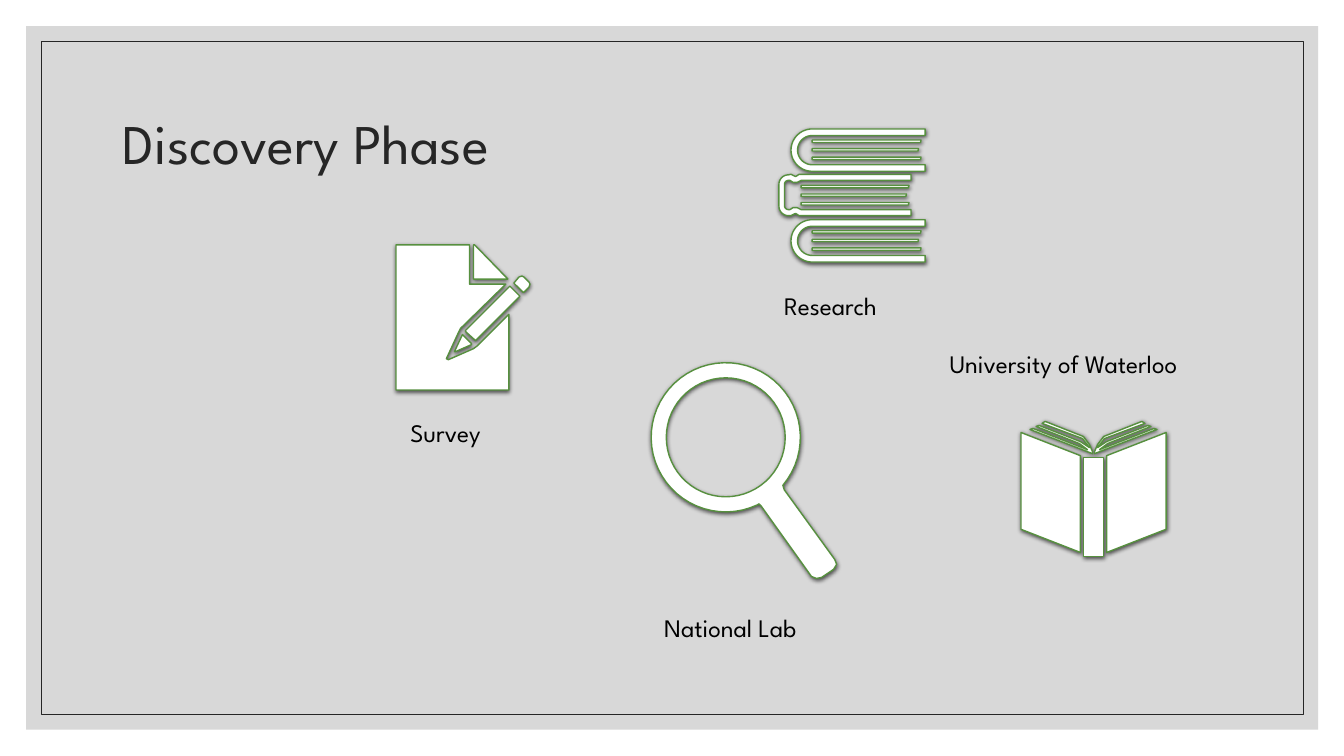
"""Build the Discovery Phase slide with its four icons and labels."""
import math

from lxml import etree
from pptx import Presentation
from pptx import util as u
from pptx.dml import color
from pptx.enum import shapes, text
from pptx.oxml import ns

GRID = 0.0254
FONT = "League Spartan"
INK, GREEN, GREY = "262626", "57903F", "BFBFBF"


def rgb(value):
    """Return a colour from a hex string."""
    return color.RGBColor.from_string(value)


def child(parent, tag, **attrs):
    """Append a drawing element with attributes."""
    return etree.SubElement(parent, ns.qn(tag), {k: str(v) for k, v in attrs.items()})


def set_attrs(obj, values):
    """Set each attribute of an object from a dict."""
    for name, value in values.items():
        setattr(obj, name, value)


def style(sp, fill=None, line=None, width=0.5):
    """Give a shape a plain fill and outline."""
    sp.shadow.inherit = False
    if fill:
        sp.fill.solid()
        sp.fill.fore_color.rgb = rgb(fill)
    else:
        sp.fill.background()
    if line:
        sp.line.color.rgb = rgb(line)
        sp.line.width = u.Pt(width)
    else:
        sp.line.fill.background()


def panel(s, inset, size, **look):
    """Draw a rectangle inset equally from the slide corner."""
    box = [u.Cm(v) for v in (inset, inset, *size)]
    sp = s.shapes.add_shape(shapes.MSO_SHAPE.RECTANGLE, *box)
    style(sp, **look)
    return sp


def label(s, words, box, size=18, ink="000000", frame=None, spacing=None):
    """Add a single-paragraph text box."""
    sp = s.shapes.add_textbox(*[u.Cm(v) for v in box])
    tf = sp.text_frame
    margins = {f"margin_{side}": u.Cm(0.13) for side in ("left", "top", "right", "bottom")}
    fit = {"word_wrap": False, "auto_size": text.MSO_AUTO_SIZE.SHAPE_TO_FIT_TEXT}
    set_attrs(tf, {**margins, **(frame or fit)})
    p = tf.paragraphs[0]
    p.line_spacing = spacing
    r = p.add_run()
    r.text = words
    set_attrs(r.font, {"name": FONT, "size": u.Pt(size)})
    r.font.color.rgb = rgb(ink)


def icon(s, left, top, contours):
    """Draw closed contours as one white icon with a soft shadow."""
    outlines = [[(u.Cm(x * GRID), u.Cm(y * GRID)) for x, y in c] for c in contours]
    builder = s.shapes.build_freeform(*outlines[0][0])
    for i, points in enumerate(outlines):
        if i:
            builder.move_to(*points[0])
        builder.add_line_segments(points[1:], close=True)
    sp = builder.convert_to_shape(u.Cm(left), u.Cm(top))
    style(sp, fill="FFFFFF", line=GREEN, width=1)
    effects = sp._element.spPr.find(ns.qn("a:effectLst"))
    shadow = child(effects, "a:outerShdw", blurRad=u.Pt(3), dist=u.Pt(1), dir=5400000,
                   algn="ctr", rotWithShape=0)
    child(child(shadow, "a:srgbClr", val="000000"), "a:alpha", val=63000)


def arc(cx, cy, r, start, end):
    """Return points along an arc, with degrees running clockwise."""
    steps = max(6, round(abs(end - start) / 6))
    angles = [math.radians(start + (end - start) * i / steps) for i in range(steps + 1)]
    return [(cx + r * math.cos(a), cy + r * math.sin(a)) for a in angles]


def survey():
    """Return the sheet, folded corner and pencil."""
    sheet = [(0, 0), (0, 144), (112, 144), (112, 69), (81, 100), (77, 103), (52, 114),
             (50, 113), (62, 87), (64, 83), (109, 39), (73, 39), (73, 0)]
    fold = [(77, 0), (77, 34), (111, 34), (78, 0)]
    eraser = [(125, 31), (122, 32), (117, 38), (126, 47), (127, 47), (132, 42),
              (133, 39), (132, 37), (127, 32)]
    pencil = [(113, 41), (69, 85), (69, 86), (79, 95), (123, 51)]
    tip = [(66, 89), (58, 106), (59, 106), (75, 99), (75, 98)]
    return [sheet, fold, eraser, pencil, tip]


def magnifier():
    """Return the ring with its handle, and the lens opening."""
    handle = [(132, 126), (182, 195), (184, 200), (181, 205), (169, 213), (164, 214),
              (159, 212), (109, 142), (107, 140)]
    return [arc(74, 74, 74, 65, 400) + handle, arc(74, 74, 59, 0, 360)]


def pages(x, end, y):
    """Return three page lines, the middle one shorter."""
    return [[(x, top), (right, top), (right - 0.5, top + 2.4), (x, top + 2.4)]
            for top, right in ((y, end), (y + 8.5, end - 2.5), (y + 17, end))]


def round_book(y):
    """Return a book with a round spine."""
    cover = [(145, y), *arc(33, y + 21, 21, 270, 90), (145, y + 42), (145, y + 35.5),
             *arc(33, y + 21, 14.5, 90, 270), (145, y + 6.5)]
    return [cover] + pages(33, 141, y + 11)


def flat_book(y):
    """Return a book with a grooved flat spine."""
    outer = arc(9.5, 10, 9.5, 270, 180) + arc(9.5, 31.5, 9.5, 180, 90)
    inner = arc(9.5, 31, 4, 90, 180) + arc(9.5, 10, 4, 180, 270)
    lower = [(12, 41), (16, 39), (17, 39), (20, 41), (131, 41), (131, 35), (22, 35),
             (18, 33), (14, 33), (11, 35)]
    upper = [(x, 41 - v) for x, v in reversed(lower)]
    cover = [(x, y + v) for x, v in outer + lower + inner + upper]
    return [cover] + pages(22, 129, y + 11)


def open_book():
    """Return the spine and mirrored halves of an open book."""
    leaves = [(120, 0), (82, 15), (76, 23), (73, 30), (73, 32), (135, 8), (132, 7),
              (78, 28), (86, 22), (129, 5), (126, 4), (85, 20), (76, 26), (83, 17), (123, 2)]
    cover = [(144, 11), (85, 34), (85, 130), (144, 107)]
    spine = [(62, 36), (62, 134), (82, 134), (82, 36)]
    mirrored = [[(144 - x, y) for x, y in half] for half in (leaves, cover)]
    return [leaves, cover, *mirrored, spine]


def main():
    """Assemble and save the slide."""
    prs = Presentation()
    set_attrs(prs, {"slide_width": u.Cm(33.87), "slide_height": u.Cm(19.05)})
    s = prs.slides.add_slide(prs.slide_layouts[6])

    backdrop = panel(s, 0.66, (32.56, 17.73), fill=GREY)
    child(backdrop.fill._xPr.find(".//" + ns.qn("a:srgbClr")), "a:alpha", val=60000)
    panel(s, 1.04, (31.8, 16.97), line=INK)
    label(s, "Discovery Phase", (2.97, 1.78, 27.94, 3.81), 40, INK,
          {"word_wrap": True, "vertical_anchor": text.MSO_ANCHOR.MIDDLE}, 0.9)

    icon(s, 9.98, 6.17, survey())
    icon(s, 16.41, 9.14, magnifier())
    icon(s, 19.63, 3.25, round_book(0) + flat_book(45) + round_book(90))
    icon(s, 25.73, 10.62, open_book())

    for words, box in (
        ("Survey", (10.21, 10.39, 2.29, 1.03)),
        ("Research", (19.63, 7.19, 3.18, 1.03)),
        ("National Lab", (16.61, 15.29, 4.24, 1.03)),
        ("University of Waterloo", (23.8, 8.66, 6.86, 1.03)),
    ):
        label(s, words, box)
    prs.save("out.pptx")


if __name__ == "__main__":
    main()
